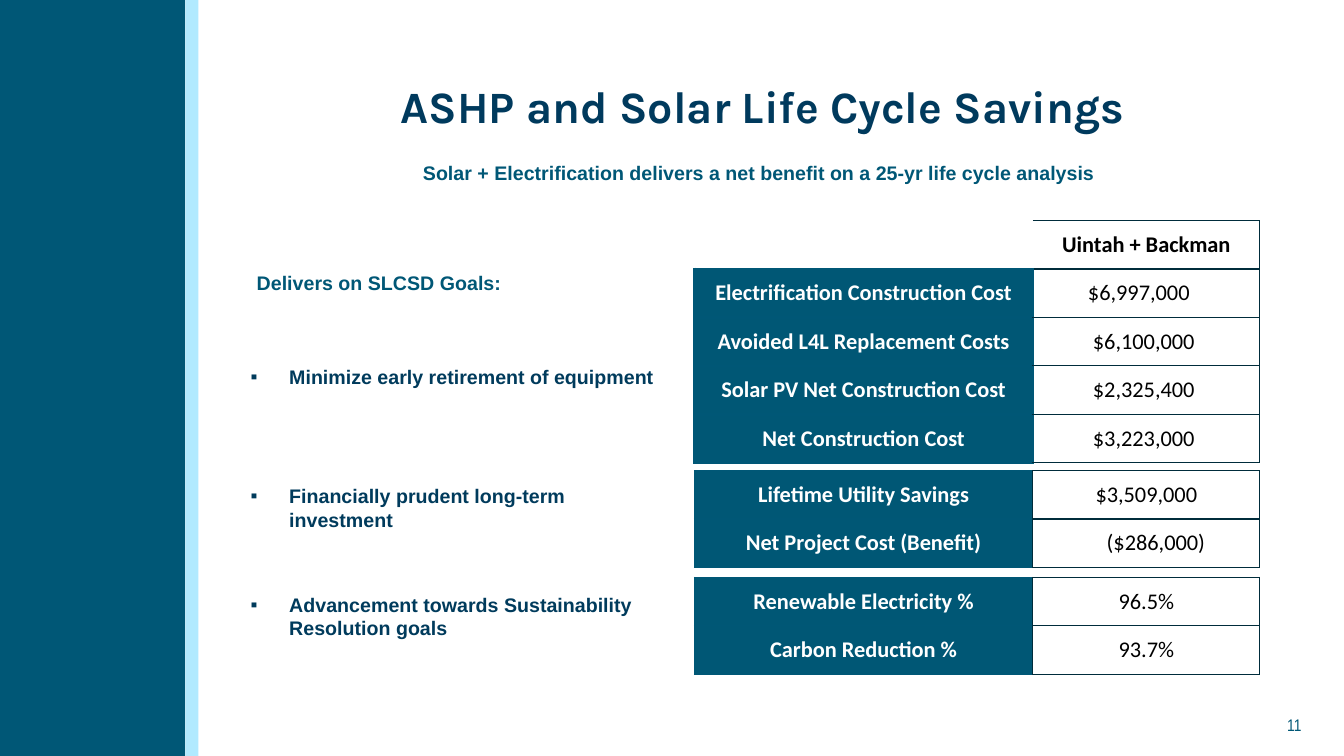
"""Build the slide on life cycle savings of heat pumps and solar power."""
from lxml.etree import SubElement
from pptx import Presentation
from pptx.dml.color import RGBColor
from pptx.enum.shapes import MSO_SHAPE as Shape
from pptx.enum.text import MSO_ANCHOR as Anchor, MSO_AUTO_SIZE as AutoSize, PP_ALIGN as Align
from pptx.oxml.ns import qn
from pptx.util import Cm, Pt

TEAL, NAVY, INK = "005776", "003B5C", "002C3B"

TITLE = "ASHP and Solar Life Cycle Savings"
HEADINGS = [
    ("Solar + Electrification delivers a net benefit on a 25-yr life cycle analysis", 10.41, 3.94, 22),
    ("Delivers on SLCSD Goals:", 6.22, 6.71, 9.65),
]
GOALS = [
    ("Minimize early retirement of equipment", 9.07),
    ("Financially prudent long-term investment", 12.07),
    ("Advancement towards Sustainability Resolution goals", 14.81),
]
BANDS = [(0, 4.67, TEAL), (4.67, 0.33, "B1EAFF")]

# Each row: label, value, left margin, right margin
TABLES = [
    (5.56, 2.25, [
        ("", "Uintah + Backman", 0, 0),
        ("Electrification Construction Cost", "$6,997,000", 0, 0.38),
        ("Avoided L4L Replacement Costs", "$6,100,000", 0, 0.13),
        ("Solar PV Net Construction Cost", "$2,325,400", 0, 0.13),
        ("Net Construction Cost", "$3,223,000", 0, 0.13),
    ]),
    (11.86, 1, [
        ("Lifetime Utility Savings", "$3,509,000", 0, 0),
        ("Net Project Cost (Benefit)", "($286,000)", 0.48, 0),
    ]),
    (14.55, 1, [
        ("Renewable Electricity %", "96.5%", 0, 0),
        ("Carbon Reduction %", "93.7%", 0, 0),
    ]),
]
TABLE_LEFT, COLUMN_WIDTHS, ROW_HEIGHT = 17.5, (8.53, 5.72), 1.22


def color(value):
    return RGBColor.from_string(value)


def write(frame, text, font="Arial", size=14, fill=TEAL, bold=True, align=Align.LEFT, bullet=None):
    paragraph = frame.paragraphs[0]
    paragraph.text = text
    paragraph.alignment = align
    paragraph.space_before = Pt(0)
    if bullet:
        properties = paragraph._p.get_or_add_pPr()
        properties.set("marL", str(Cm(1.3)))
        properties.set("indent", str(Cm(-0.97)))
        SubElement(properties, qn("a:buFont"), typeface="Arial")
        SubElement(properties, qn("a:buChar"), char=bullet)
    style = paragraph.runs[0].font
    style.name, style.size, style.bold = font, Pt(size), bold
    style.color.rgb = color(fill)


def add_text(slide, text, left, top, width, height=0.86, margin=None, **style):
    frame = slide.shapes.add_textbox(Cm(left), Cm(top), Cm(width), Cm(height)).text_frame
    frame.word_wrap = True
    if margin is not None:
        frame.margin_left = frame.margin_right = frame.margin_top = frame.margin_bottom = Cm(margin)
    write(frame, text, **style)


def set_borders(cell, line_color, width):
    properties = cell._tc.get_or_add_tcPr()
    for side in ("lnL", "lnR", "lnT", "lnB"):
        line = SubElement(properties, qn(f"a:{side}"), w=str(Pt(width)))
        if line_color:
            solid = SubElement(line, qn("a:solidFill"))
            SubElement(solid, qn("a:srgbClr"), val=line_color)
        else:
            SubElement(line, qn("a:noFill"))


def format_cell(cell, text, left=0, right=0, fill=None, **style):
    cell.margin_left, cell.margin_right = Cm(left), Cm(right)
    cell.margin_top = cell.margin_bottom = 0
    cell.vertical_anchor = Anchor.MIDDLE
    if fill:
        cell.fill.solid()
        cell.fill.fore_color.rgb = color(fill)
    else:
        cell.fill.background()
    if text:
        write(cell.text_frame, text, font="Calibri", size=16, align=Align.CENTER, **style)


def add_savings_table(slide, top, edge, rows):
    table = slide.shapes.add_table(
        len(rows), 2, Cm(TABLE_LEFT), Cm(top), Cm(sum(COLUMN_WIDTHS)), Cm(ROW_HEIGHT * len(rows))
    ).table
    table.first_row = table.horz_banding = False
    for column, width in zip(table.columns, COLUMN_WIDTHS):
        column.width = Cm(width)
    for index, (label, value, left, right) in enumerate(rows):
        table.rows[index].height = Cm(ROW_HEIGHT)
        label_cell, value_cell = table.cell(index, 0), table.cell(index, 1)
        set_borders(label_cell, TEAL if label else None, edge)
        set_borders(value_cell, INK, 1)
        format_cell(label_cell, label, fill="005775" if label else None, **{"bold": True})
        format_cell(value_cell, value, left, right, bold=not label)
        for cell, ink in ((label_cell, "FFFFFF"), (value_cell, "000000")):
            for run in cell.text_frame.paragraphs[0].runs:
                run.font.color.rgb = color(ink)


def main():
    presentation = Presentation()
    presentation.slide_width, presentation.slide_height = Cm(33.87), Cm(19.05)
    slide = presentation.slides.add_slide(presentation.slide_layouts[5])

    for left, width, fill in BANDS:
        band = slide.shapes.add_shape(Shape.RECTANGLE, Cm(left), 0, Cm(width), presentation.slide_height)
        band.shadow.inherit = False
        band.fill.solid()
        band.fill.fore_color.rgb = color(fill)
        band.line.fill.background()

    title = slide.shapes.title
    title.left, title.top, title.width, title.height = Cm(5.74), Cm(1.85), Cm(26.97), Cm(1.27)
    title.text_frame.vertical_anchor = Anchor.TOP
    title.text_frame.auto_size = AutoSize.NONE
    write(title.text_frame, TITLE, font="Karla", size=32, fill="003A5D", align=Align.CENTER)

    for top, edge, rows in TABLES:
        add_savings_table(slide, top, edge, rows)
    for text, left, top, width in HEADINGS:
        add_text(slide, text, left, top, width)
    for text, top in GOALS:
        add_text(slide, text, 5.74, top, 11, fill=NAVY, bullet="▪")
    add_text(slide, "11", 29.6, 18, 3.2, 0.5, margin=0, font="Arial Narrow", size=12,
             bold=False, align=Align.RIGHT)

    presentation.save("out.pptx")


if __name__ == "__main__":
    main()
